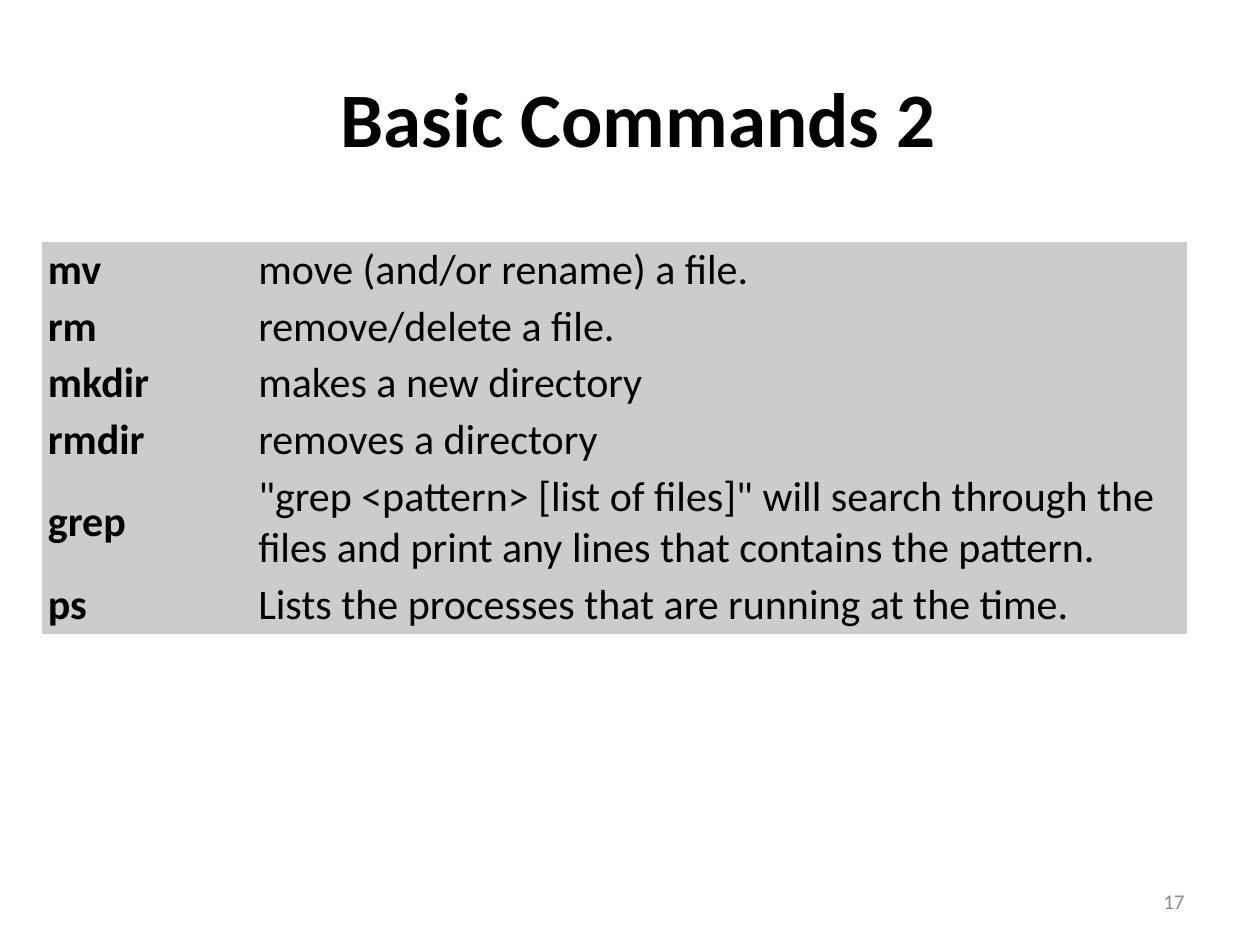
"""Build the Basic Commands 2 slide with its table of shell commands."""
from pptx import Presentation
from pptx import util as u
from pptx.dml.color import RGBColor
from pptx.enum import text
from pptx.oxml import ns

BLACK = RGBColor(0x00, 0x00, 0x00)
GRAY = RGBColor(0x8C, 0x8C, 0x8C)
CELL_FILL = RGBColor(0xCC, 0xCC, 0xCC)
NO_STYLE_NO_GRID = "{2D5ABB26-0587-4C30-8999-92F81FD0307C}"
COLUMN_WIDTHS = [1.67, 7.42]
LINE_HEIGHT = 0.41
COMMANDS = [
    ("mv", "move (and/or rename) a file.", 1),
    ("rm", "remove/delete a file.", 1),
    ("mkdir", "makes a new directory", 1),
    ("rmdir", "removes a directory", 1),
    ("grep", '"grep <pattern> [list of files]" will search through the files '
             "and print any lines that contains the pattern.", 2),
    ("ps", "Lists the processes that are running at the time.", 1),
]


def write(frame, content, size=24, bold=False, color=BLACK, align=text.PP_ALIGN.LEFT):
    frame.word_wrap = True
    paragraph = frame.paragraphs[0]
    paragraph.alignment = align
    run = paragraph.add_run()
    run.text = content
    run.font.name = "Calibri"
    run.font.size = u.Pt(size)
    run.font.bold = bold
    run.font.color.rgb = color


presentation = Presentation()
presentation.slide_width = u.Inches(10)
presentation.slide_height = u.Inches(7.5)
slide = presentation.slides.add_slide(presentation.slide_layouts[5])

title = slide.shapes.title
title.left, title.top = u.Inches(0.5), u.Inches(0.3)
title.width, title.height = u.Inches(9), u.Inches(1.25)
title.text_frame.vertical_anchor = text.MSO_ANCHOR.MIDDLE
for content, bold in ((" ", False), ("Basic Commands 2", True)):
    write(title.text_frame, content, size=44, bold=bold, align=text.PP_ALIGN.CENTER)

row_heights = [lines * LINE_HEIGHT + 0.04 for _, _, lines in COMMANDS]
table = slide.shapes.add_table(
    len(COMMANDS), len(COLUMN_WIDTHS), u.Inches(0.33), u.Inches(1.92),
    u.Inches(sum(COLUMN_WIDTHS)), u.Inches(sum(row_heights))).table
table.first_row = table.horz_banding = False
table._tbl.tblPr.find(ns.qn("a:tableStyleId")).text = NO_STYLE_NO_GRID
for column, width in zip(table.columns, COLUMN_WIDTHS):
    column.width = u.Inches(width)
for row, height, (command, description, _) in zip(table.rows, row_heights, COMMANDS):
    row.height = u.Inches(height)
    for cell, content, bold in zip(row.cells, (command, description), (True, False)):
        cell.fill.solid()
        cell.fill.fore_color.rgb = CELL_FILL
        cell.vertical_anchor = text.MSO_ANCHOR.MIDDLE
        cell.margin_left = cell.margin_right = u.Inches(0.05)
        cell.margin_top = cell.margin_bottom = u.Inches(0.02)
        write(cell.text_frame, content, bold=bold)

page_number = slide.shapes.add_textbox(
    u.Inches(7.17), u.Inches(6.95), u.Inches(2.33), u.Inches(0.4))
page_number.text_frame.vertical_anchor = text.MSO_ANCHOR.MIDDLE
write(page_number.text_frame, "17", size=12, color=GRAY, align=text.PP_ALIGN.RIGHT)

presentation.save("out.pptx")
